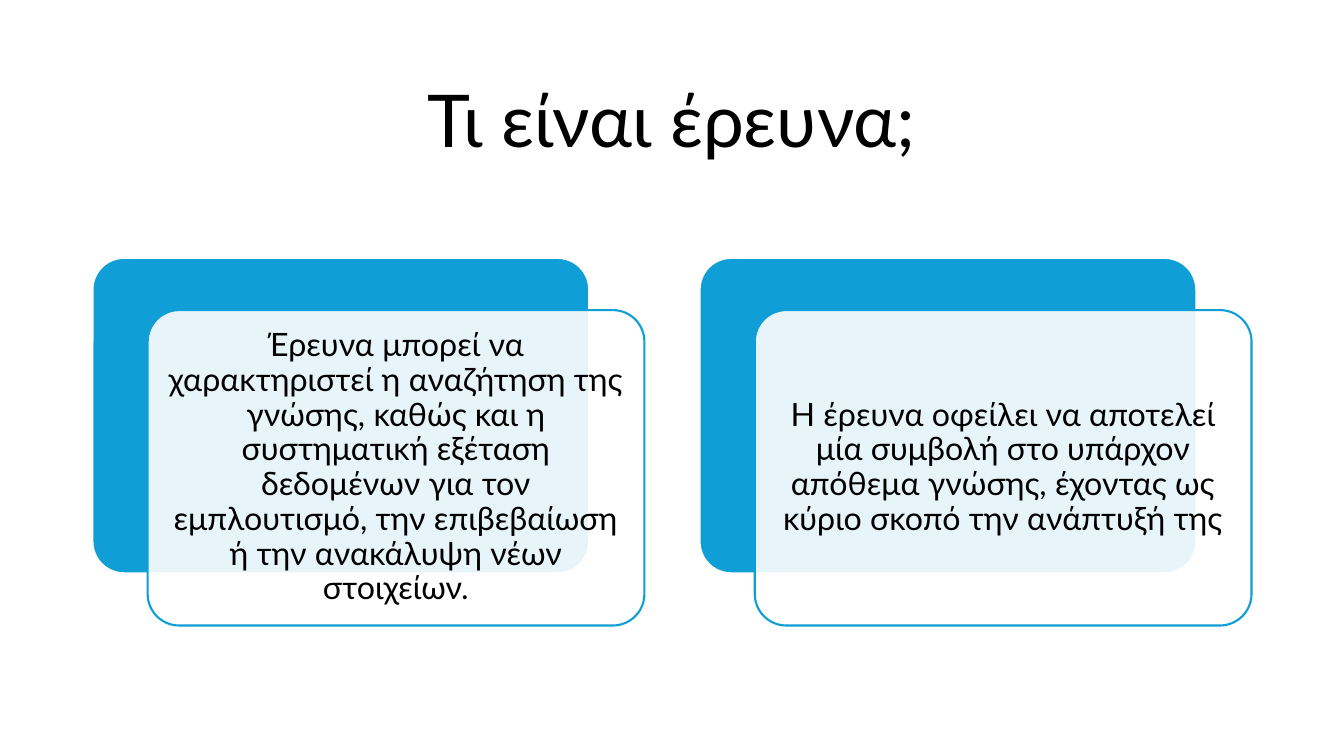
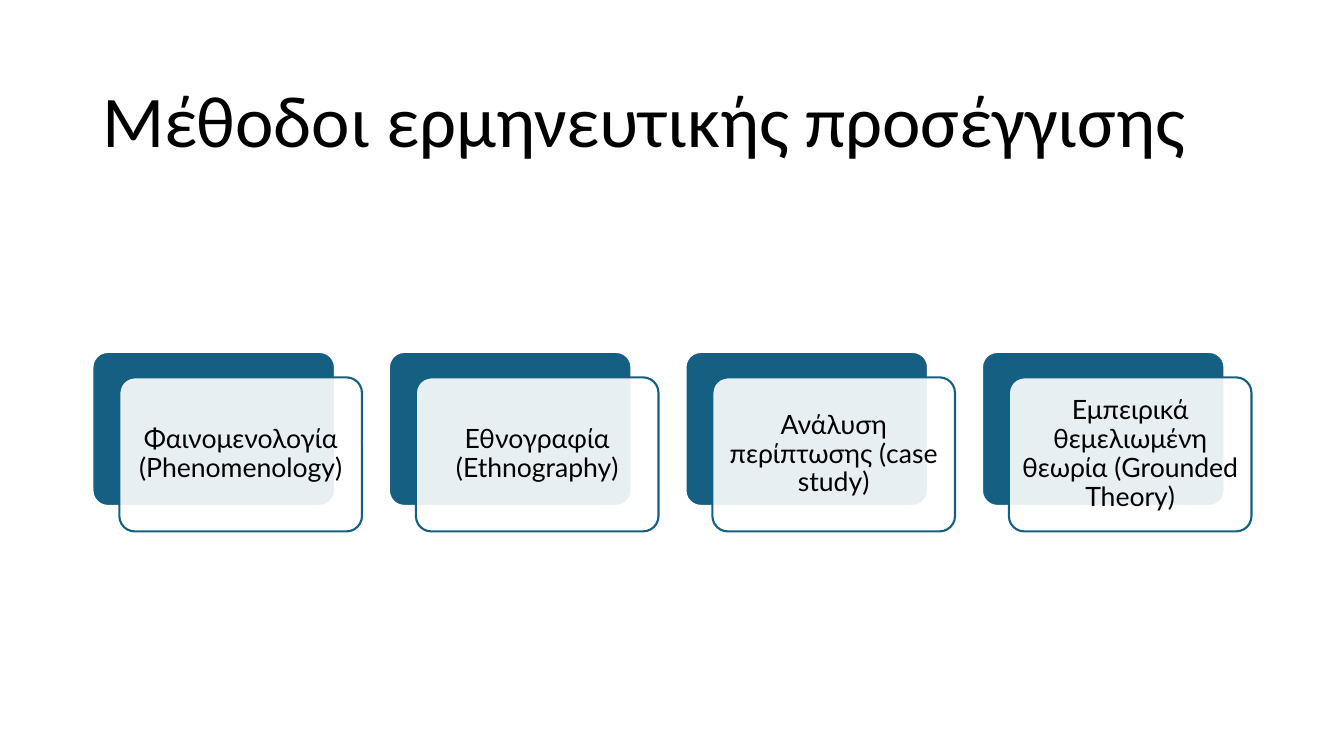
from lxml import etree
from pptx import Presentation
from pptx.dml.color import RGBColor
from pptx.enum.shapes import MSO_SHAPE
from pptx.enum.text import MSO_ANCHOR, PP_ALIGN
from pptx.oxml.ns import qn
from pptx.util import Cm, Pt

BLACK = RGBColor(0x00, 0x00, 0x00)
WHITE = RGBColor(0xFF, 0xFF, 0xFF)
SKY = RGBColor(0x0F, 0x9E, 0xD5)
TEAL = RGBColor(0x15, 0x60, 0x82)

SLIDES = [
    {
        "title": "Τι είναι έρευνα;",
        "title_format": {"font": "Lato", "align": PP_ALIGN.CENTER},
        "colour": SKY,
        "size": 23,
        "margin": 0.25,
        "cards": [
            "Έρευνα μπορεί να χαρακτηριστεί η αναζήτηση της γνώσης, καθώς και "
            "η συστηματική εξέταση δεδομένων για τον εμπλουτισμό, την "
            "επιβεβαίωση ή την ανακάλυψη νέων στοιχείων.",
            "Η έρευνα οφείλει να αποτελεί μία συμβολή στο υπάρχον απόθεμα "
            "γνώσης, έχοντας ως κύριο σκοπό την ανάπτυξή της",
        ],
    },
    {
        "title": "Μέθοδοι ερμηνευτικής προσέγγισης",
        "title_format": {"font": "Calibri", "align": PP_ALIGN.LEFT},
        "colour": TEAL,
        "size": 19,
        "margin": 0.2,
        "cards": [
            "Φαινομενολογία (Phenomenology)",
            "Εθνογραφία (Ethnography)",
            "Ανάλυση περίπτωσης (case study)",
            "Εμπειρικά θεμελιωμένη θεωρία (Grounded Theory)",
        ],
    },
]

# Lengths in centimetres
SLIDE_WIDTH, SLIDE_HEIGHT = 33.87, 19.05
LEFT, CONTENT_WIDTH = 2.33, 29.21
TITLE_TOP, TITLE_HEIGHT = 1.55, 3.15
CARDS_MIDDLE = 11.13

# Proportions of a card's width
CARD_HEIGHT = 0.635
SHIFT_X = 1 / 9
SHIFT_Y = 0.105


def write(shape, text, *, size, font="Lato", align=PP_ALIGN.CENTER, margins=(0.25, 0.13)):
    frame = shape.text_frame
    frame.word_wrap = True
    frame.vertical_anchor = MSO_ANCHOR.MIDDLE
    frame.margin_left = frame.margin_right = Cm(margins[0])
    frame.margin_top = frame.margin_bottom = Cm(margins[1])
    paragraph = frame.paragraphs[0]
    paragraph.alignment = align
    paragraph.line_spacing = 0.9
    run = paragraph.add_run()
    run.text = text
    run.font.name = font
    run.font.size = Pt(size)
    run.font.color.rgb = BLACK


def add_panel(slide, x, y, width, fill, line, opacity=100):
    panel = slide.shapes.add_shape(
        MSO_SHAPE.ROUNDED_RECTANGLE, Cm(x), Cm(y), Cm(width), Cm(width * CARD_HEIGHT)
    )
    panel.adjustments[0] = 0.1
    panel.shadow.inherit = False
    panel.fill.solid()
    panel.fill.fore_color.rgb = fill
    panel.line.color.rgb = line
    panel.line.width = Pt(1.5)
    if opacity < 100:
        colour = panel.fill._xPr.find(qn("a:solidFill"))[0]
        etree.SubElement(colour, qn("a:alpha"), val=str(opacity * 1000))
    return panel


def add_cards(slide, texts, colour, size, margin):
    """Spread the cards over the content width, with gaps equal to the front panel's shift."""
    count = len(texts)
    width = CONTENT_WIDTH / (count + (2 * count - 1) * SHIFT_X)
    top = CARDS_MIDDLE - width * (CARD_HEIGHT + SHIFT_Y) / 2
    for index, text in enumerate(texts):
        x = LEFT + index * width * (1 + 2 * SHIFT_X)
        add_panel(slide, x, top, width, colour, WHITE)
        front = add_panel(
            slide, x + width * SHIFT_X, top + width * SHIFT_Y, width, WHITE, colour, opacity=90
        )
        write(front, text, size=size, margins=(margin, margin))


def main():
    deck = Presentation()
    deck.slide_width, deck.slide_height = Cm(SLIDE_WIDTH), Cm(SLIDE_HEIGHT)
    for content in SLIDES:
        slide = deck.slides.add_slide(deck.slide_layouts[6])
        title = slide.shapes.add_textbox(
            Cm(LEFT), Cm(TITLE_TOP), Cm(CONTENT_WIDTH), Cm(TITLE_HEIGHT)
        )
        write(title, content["title"], size=52, **content["title_format"])
        add_cards(slide, content["cards"], content["colour"], content["size"], content["margin"])
    deck.save("out.pptx")


if __name__ == "__main__":
    main()
